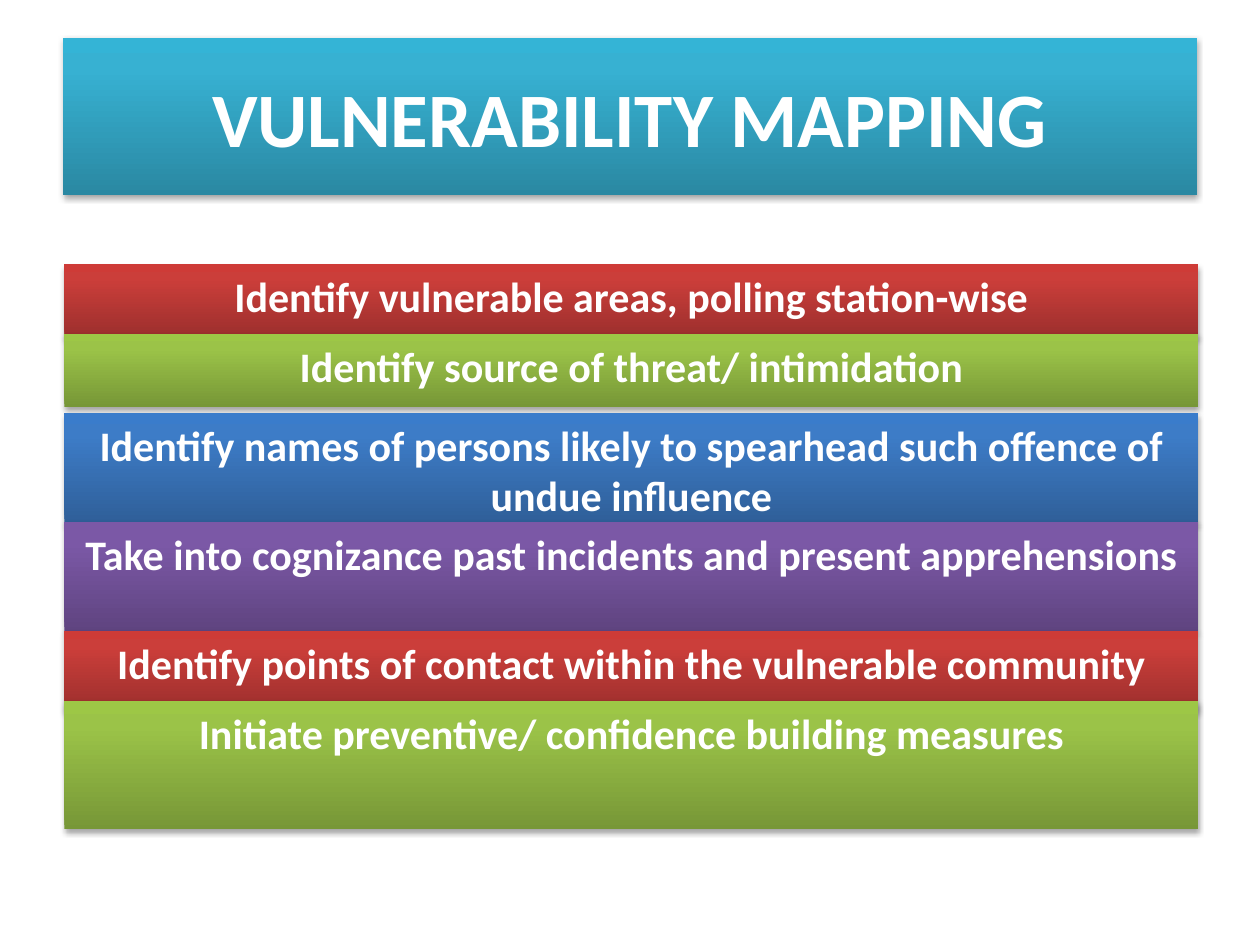
import copy

import lxml.etree
import pptx
import pptx.dml.color
import pptx.enum.shapes
import pptx.enum.text
import pptx.oxml.ns
import pptx.util

Cm = pptx.util.Cm
Pt = pptx.util.Pt
qn = pptx.oxml.ns.qn
ANCHOR = pptx.enum.text.MSO_ANCHOR

TITLE = "VULNERABILITY MAPPING"
STEPS = [
    ("Identify vulnerable areas, polling station-wise", "red", 5.33, 1.47),
    ("Identify source of threat/ intimidation", "green", 6.73, 1.47),
    ("Identify names of persons likely to spearhead such offence of undue influence", "blue", 8.33, 2.21),
    ("Take into cognizance past incidents and present apprehensions", "purple", 10.52, 2.21),
    ("Identify points of contact within the vulnerable community", "red", 12.73, 1.6),
    ("Initiate preventive/ confidence building measures", "green", 14.13, 2.59),
]

THEME = {
    "font": "Calibri",
    "text": "FFFFFF",
    "title_size": 44,
    "step_size": 24,
    "stops": (0, 0.8, 1),
    "shadow": "000000",
    "teal": ("2A88A2", "37B1D2", "34B4D6"),
    "red": ("9C2F2D", "CB3E3A", "CE3B37"),
    "green": ("779737", "9BC348", "9DC746"),
    "blue": ("2F5F99", "3D7CC7", "3A7CCB"),
    "purple": ("5F4480", "7B58A6", "7C57A8"),
}
BAR_LEFT, BAR_WIDTH = 1.3, 22.86


def rgb(value):
    return pptx.dml.color.RGBColor.from_string(value)


def write_text(box, text, size, anchor):
    frame = box.text_frame
    frame.word_wrap = True
    frame.vertical_anchor = anchor
    para = frame.paragraphs[0]
    para.alignment = pptx.enum.text.PP_ALIGN.CENTER
    span = para.add_run()
    span.text = text
    span.font.name = THEME["font"]
    span.font.size = Pt(size)
    span.font.bold = True
    span.font.color.rgb = rgb(THEME["text"])


def add_shadow(box):
    box.shadow.inherit = False
    effects = box._element.spPr.find(qn("a:effectLst"))
    outer = lxml.etree.SubElement(
        effects, qn("a:outerShdw"), blurRad=str(Pt(3.1)), dist=str(Pt(1.8)),
        dir="5400000", rotWithShape="0")
    color = lxml.etree.SubElement(outer, qn("a:srgbClr"), val=THEME["shadow"])
    lxml.etree.SubElement(color, qn("a:alpha"), val="35000")


def style_bar(box, color):
    box.fill.gradient()
    box.fill.gradient_angle = 90
    stop_list = box._element.spPr.find(qn("a:gradFill")).find(qn("a:gsLst"))
    stop_list.append(copy.deepcopy(stop_list[-1]))
    for stop, position, value in zip(box.fill.gradient_stops, THEME["stops"], THEME[color]):
        stop.position = position
        stop.color.rgb = rgb(value)
    box.line.fill.background()
    add_shadow(box)


def main():
    deck = pptx.Presentation()
    deck.slide_width, deck.slide_height = Cm(25.4), Cm(19.05)
    page = deck.slides.add_slide(deck.slide_layouts[5])

    title = page.shapes.title
    title.left, title.top = Cm(1.27), Cm(0.76)
    title.width, title.height = Cm(BAR_WIDTH), Cm(3.18)
    style_bar(title, "teal")
    write_text(title, TITLE, THEME["title_size"], ANCHOR.MIDDLE)

    for text, color, top, height in STEPS:
        bar = page.shapes.add_shape(
            pptx.enum.shapes.MSO_SHAPE.RECTANGLE,
            Cm(BAR_LEFT), Cm(top), Cm(BAR_WIDTH), Cm(height))
        style_bar(bar, color)
        write_text(bar, text, THEME["step_size"], ANCHOR.TOP)

    deck.save("out.pptx")


if __name__ == "__main__":
    main()
